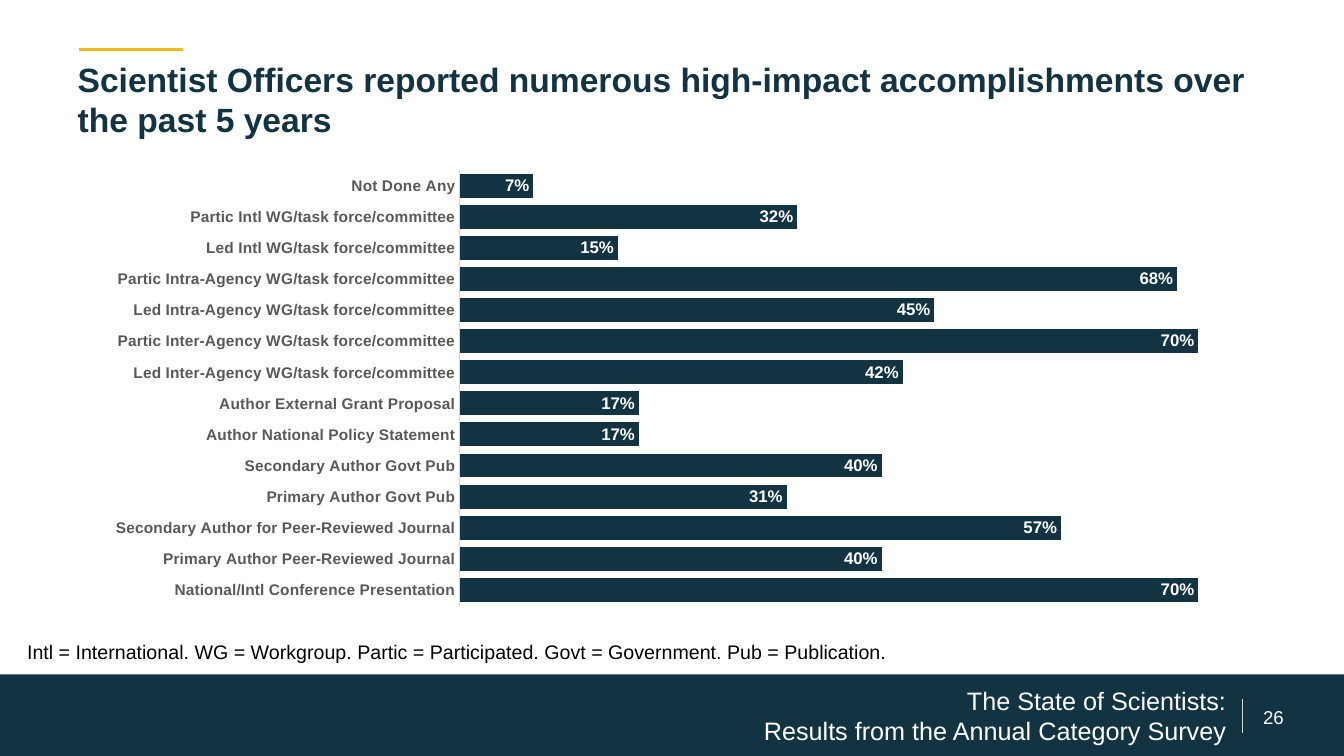
import pptx
import pptx.util
import pptx.chart.data
import pptx.dml.color
import pptx.enum.chart
import pptx.enum.shapes
import pptx.enum.text
import pptx.oxml
import pptx.oxml.ns
from pptx.util import Inches

RGBColor = pptx.dml.color.RGBColor
NAVY = RGBColor(0x12, 0x33, 0x42)
GOLD = RGBColor(0xF4, 0xBA, 0x18)
WHITE = RGBColor(0xFF, 0xFF, 0xFF)
BLACK = RGBColor(0, 0, 0)
GREY = RGBColor(0x59, 0x59, 0x59)
PALE = RGBColor(0xD9, 0xD9, 0xD9)
ALIGN = pptx.enum.text.PP_ALIGN
ANCHOR = pptx.enum.text.MSO_ANCHOR


def style_font(font, size, color, bold=False):
    values = {"name": "Arial", "size": pptx.util.Pt(size), "bold": bold}
    for key, value in values.items():
        setattr(font, key, value)
    font.color.rgb = color


def write(holder, box, text, size, color, bold, align, anchor):
    holder.left, holder.top, holder.width, holder.height = map(Inches, box)
    frame = holder.text_frame
    values = {
        "word_wrap": True,
        "auto_size": pptx.enum.text.MSO_AUTO_SIZE.NONE,
        "vertical_anchor": anchor,
        "text": text,
    }
    for key, value in values.items():
        setattr(frame, key, value)
    frame.paragraphs[0].alignment = align
    for run in frame.paragraphs[0].runs:
        style_font(run.font, size, color, bold)


deck = pptx.Presentation()
deck.slide_width, deck.slide_height = Inches(13.33), Inches(7.5)
slide = deck.slides.add_slide(deck.slide_layouts[5])
shapes = slide.shapes

footer_band = shapes.add_shape(
    pptx.enum.shapes.MSO_SHAPE.RECTANGLE,
    Inches(0), Inches(6.69), Inches(13.33), Inches(0.81))
footer_band.shadow.inherit = False
footer_band.fill.solid()
footer_band.fill.fore_color.rgb = NAVY
footer_band.line.fill.background()

for x1, y1, x2, y2, color, weight in [
    (0.78, 0.49, 1.82, 0.49, GOLD, 2.5),
    (12.32, 6.93, 12.32, 7.27, PALE, 0.75),
]:
    rule = shapes.add_connector(
        pptx.enum.shapes.MSO_CONNECTOR.STRAIGHT,
        Inches(x1), Inches(y1), Inches(x2), Inches(y2))
    rule.line.color.rgb = color
    rule.line.width = pptx.util.Pt(weight)
    rule._element.spPr.append(pptx.oxml.parse_xml(
        "<a:effectLst %s/>" % pptx.oxml.ns.nsdecls("a")))

write(shapes.title, (0.67, 0.53, 12, 0.68),
      "Scientist Officers reported numerous high-impact accomplishments over the past 5 years",
      24, NAVY, True, ALIGN.LEFT, ANCHOR.TOP)

for box, text, size, color, align, anchor in [
    ((3.75, 6.93, 8.51, 0.33),
     "The State of Scientists:\vResults from the Annual Category Survey",
     18, WHITE, ALIGN.RIGHT, ANCHOR.MIDDLE),
    ((12.24, 6.97, 0.78, 0.28), "26", 13.3, WHITE, ALIGN.CENTER, ANCHOR.MIDDLE),
    ((0.17, 6.3, 10.51, 0.34),
     "Intl = International. WG = Workgroup. Partic = Participated. "
     "Govt = Government. Pub = Publication.",
     14, BLACK, ALIGN.LEFT, ANCHOR.TOP),
]:
    write(shapes.add_textbox(0, 0, 0, 0), box, text, size, color, False, align, anchor)

accomplishments = {
    "National/Intl Conference Presentation": 0.70,
    "Primary Author Peer-Reviewed Journal": 0.40,
    "Secondary Author for Peer-Reviewed Journal": 0.57,
    "Primary Author Govt Pub": 0.31,
    "Secondary Author Govt Pub": 0.40,
    "Author National Policy Statement": 0.17,
    "Author External Grant Proposal": 0.17,
    "Led Inter-Agency WG/task force/committee": 0.42,
    "Partic Inter-Agency WG/task force/committee": 0.70,
    "Led Intra-Agency WG/task force/committee": 0.45,
    "Partic Intra-Agency WG/task force/committee": 0.68,
    "Led Intl WG/task force/committee": 0.15,
    "Partic Intl WG/task force/committee": 0.32,
    "Not Done Any": 0.07,
}
survey = pptx.chart.data.CategoryChartData(number_format="0%")
survey.categories = list(accomplishments)
survey.add_series("Series 1", list(accomplishments.values()))
chart = shapes.add_chart(
    pptx.enum.chart.XL_CHART_TYPE.BAR_STACKED,
    Inches(0.51), Inches(1.52), Inches(12.65), Inches(4.78), survey).chart
chart.has_legend = False
chart.has_title = False
style_font(chart.font, 10, BLACK)

activities = chart.category_axis
activities.major_tick_mark = pptx.enum.chart.XL_TICK_MARK.NONE
activities.format.line.color.rgb = PALE
activities.format.line.width = pptx.util.Pt(0.75)
style_font(activities.tick_labels.font, 11, GREY, True)

share = chart.value_axis
for key, value in {"minimum_scale": 0, "maximum_scale": 0.8,
                   "has_major_gridlines": False, "visible": False}.items():
    setattr(share, key, value)

bars = chart.plots[0]
for key, value in {"gap_width": 30, "overlap": 100,
                   "vary_by_categories": False, "has_data_labels": True}.items():
    setattr(bars, key, value)
bars.series[0].format.fill.solid()
bars.series[0].format.fill.fore_color.rgb = NAVY
percents = bars.data_labels
for key, value in {
    "show_value": True,
    "number_format": "0%",
    "number_format_is_linked": False,
    "position": pptx.enum.chart.XL_LABEL_POSITION.INSIDE_END,
}.items():
    setattr(percents, key, value)
style_font(percents.font, 12, WHITE, True)

plot_area = chart._chartSpace.chart.plotArea
for old_layout in plot_area.findall(pptx.oxml.ns.qn("c:layout")):
    plot_area.remove(old_layout)
plot_area.insert(0, pptx.oxml.parse_xml(
    '<c:layout %s><c:manualLayout><c:layoutTarget val="inner"/>'
    '<c:xMode val="edge"/><c:yMode val="edge"/><c:x val="0.32"/><c:y val="0.035"/>'
    '<c:w val="0.662"/><c:h val="0.904"/></c:manualLayout></c:layout>'
    % pptx.oxml.ns.nsdecls("c")))

deck.save("out.pptx")
